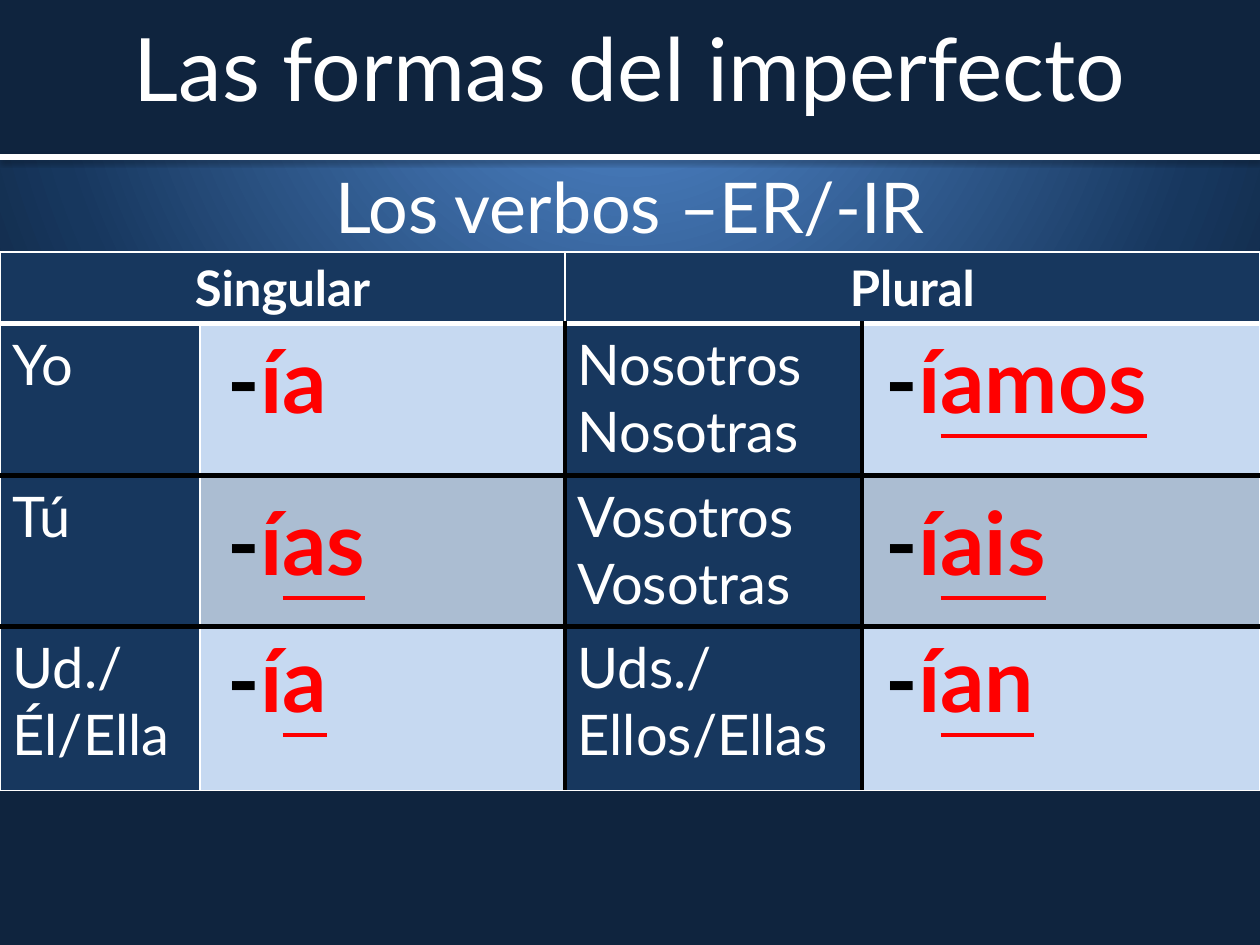
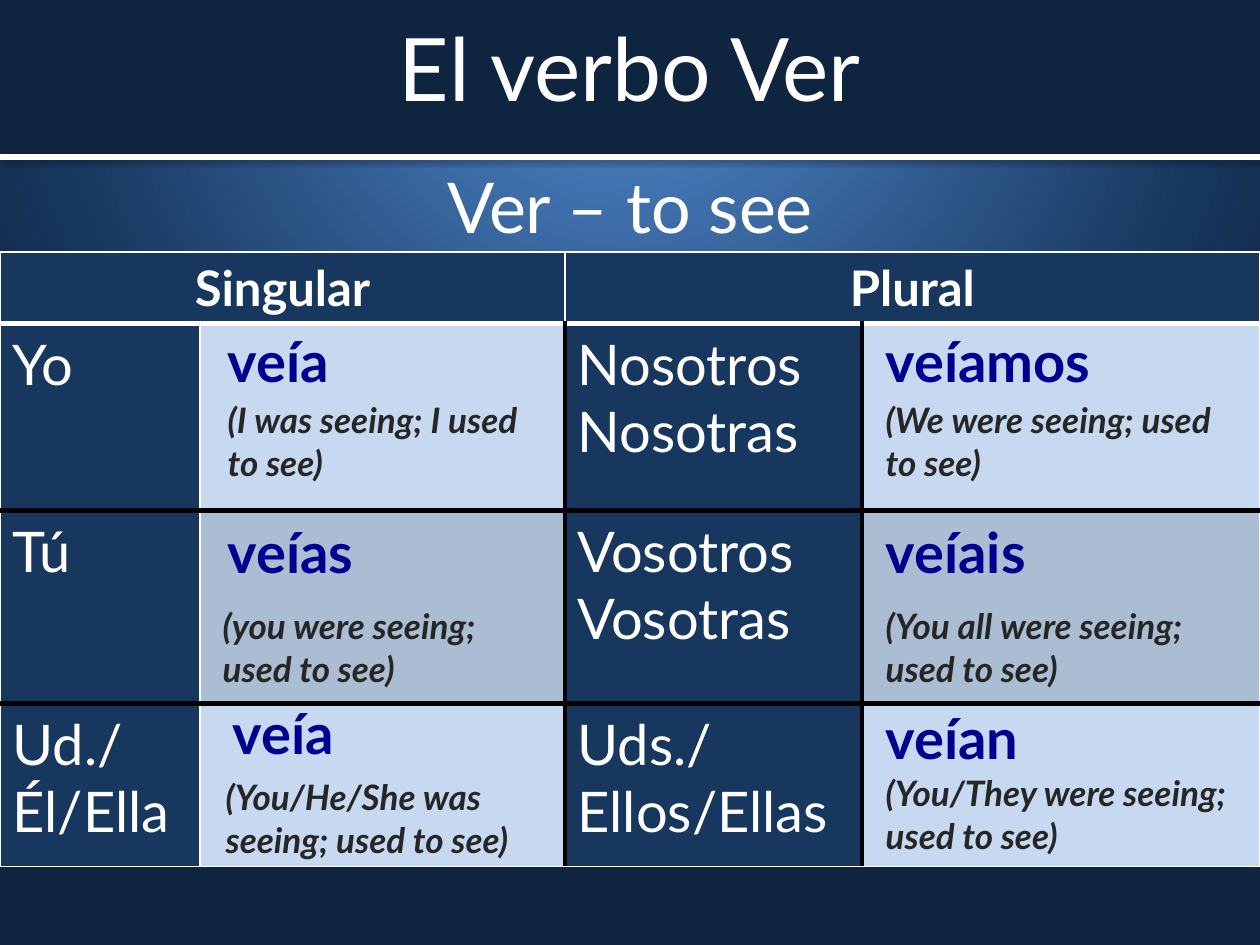
import pptx
import pptx.util
import pptx.dml.color
import pptx.enum.shapes
import pptx.enum.text
import pptx.oxml
import pptx.oxml.ns

SCALE = 914400 / 126
WIDTH, HEIGHT = 1260, 945
FONT = "Lato"
COLORS = {
    "white": "FFFFFF", "black": "000000", "red": "FF0000", "verb": "000090",
    "gloss": "262626", "sky": "558ED5", "navy": "17375E", "night": "0F243E",
    "pale": "C6D9F1", "gray": "ABBDD2",
}
SPACE = 'xmlns:a="http://schemas.openxmlformats.org/drawingml/2006/main"'
PLAIN = "{2D5ABB26-0587-4C30-8999-92F81FD0307C}"

COLS = [200, 365, 297, 398]
HEADS = {0: "Singular", 2: "Plural"}
LABELS = [
    ("Yo", "Nosotros\nNosotras"),
    ("Tú", "Vosotros\nVosotras"),
    ("Ud./Él/Ella", "Uds./Ellos/Ellas"),
]
ACROSS = [("white", 1), ("white", 3), ("black", 3), ("black", 3), ("white", 1)]
DOWN = [("white", 1), ("white", 1), ("black", 3), ("black", 3), ("white", 1)]

ENDINGS = [
    (215, 321, 310, "ía", ""),
    (215, 483, 295, "í", "as"),
    (215, 620, 310, "í", "a"),
    (873, 321, 355, "í", "amos"),
    (873, 483, 318, "í", "ais"),
    (873, 620, 302, "í", "an"),
]
VERBS = [
    (215, 321, 310, "veía"),
    (215, 512, 295, "veías"),
    (220, 693, 310, "veía"),
    (873, 321, 355, "veíamos"),
    (873, 512, 318, "veíais"),
    (873, 698, 302, "veían"),
]
GLOSSES = [
    (215, 393, 333, "(I was seeing; I used to see)"),
    (210, 599, 355, "(you were seeing; used to see)"),
    (213, 770, 368, "(You/He/She was seeing; used to see)"),
    (873, 393, 387, "(We were seeing; used to see)"),
    (873, 599, 368, "(You all were seeing; used to see)"),
    (873, 766, 387, "(You/They were seeing; used to see)"),
]


def px(count):
    return pptx.util.Emu(round(count * SCALE))


def box(left, top, width, height):
    return px(left), px(top), px(width), px(height)


def rgb(name):
    return pptx.dml.color.RGBColor.from_string(COLORS[name])


def style(run, size, color, bold=False, italic=False, under=False):
    font = run.font
    font.name = FONT
    font.size = pptx.util.Pt(size)
    font.color.rgb = rgb(color)
    font.bold = bold
    font.italic = italic
    font.underline = under


def style_all(frame, *look, center=False):
    for para in frame.paragraphs:
        if center:
            para.alignment = pptx.enum.text.PP_ALIGN.CENTER
        for run in para.runs:
            style(run, *look)


def set_back(master):
    fill = master.background.fill
    fill.solid()
    solid = master.element.find(".//" + pptx.oxml.ns.qn("a:solidFill"))
    stops = "".join(
        f'<a:gs pos="{pos}000"><a:srgbClr val="{COLORS[name]}"/></a:gs>'
        for pos, name in ((0, "sky"), (75, "navy"), (100, "night")))
    grad = pptx.oxml.parse_xml(
        f'<a:gradFill {SPACE} rotWithShape="1"><a:gsLst>{stops}</a:gsLst>'
        '<a:path path="circle"><a:fillToRect l="50000" t="-80000" r="50000" '
        'b="180000"/></a:path></a:gradFill>')
    solid.getparent().replace(solid, grad)


def add_band(slide):
    band = slide.shapes.add_shape(
        pptx.enum.shapes.MSO_SHAPE.RECTANGLE, *box(0, 0, WIDTH, 157))
    band.shadow.inherit = False
    band.fill.solid()
    band.fill.fore_color.rgb = rgb("night")
    band.line.fill.background()
    slide.shapes.element.insert(2, band.element)


def add_rule(slide):
    rule = slide.shapes.add_connector(
        pptx.enum.shapes.MSO_CONNECTOR.STRAIGHT,
        px(0), px(157), px(WIDTH), px(157))
    rule.line.color.rgb = rgb("white")
    rule.line.width = pptx.util.Pt(3)
    rule.element.spPr.append(pptx.oxml.parse_xml(
        f'<a:effectLst {SPACE}><a:outerShdw blurRad="40000" dist="20000" '
        f'dir="5400000" rotWithShape="0"><a:srgbClr val="{COLORS["black"]}">'
        '<a:alpha val="38000"/></a:srgbClr></a:outerShdw></a:effectLst>'))


def set_text(holder, text, size, area, anchor):
    holder.left, holder.top, holder.width, holder.height = box(*area)
    frame = holder.text_frame
    frame.text = text
    frame.word_wrap = True
    frame.auto_size = pptx.enum.text.MSO_AUTO_SIZE.NONE
    frame.vertical_anchor = anchor
    style_all(frame, size, "white", center=True)


def add_slide(deck, title, topic):
    slide = deck.slides.add_slide(deck.slide_layouts[0])
    anchor = pptx.enum.text.MSO_ANCHOR
    head, body = slide.placeholders
    set_text(head, title, 50, (0, 0, WIDTH, 133), anchor.MIDDLE)
    set_text(body, topic, 40, (0, 157, WIDTH, 655), anchor.TOP)
    add_band(slide)
    add_rule(slide)
    return slide


def add_table(slide, left, top, cols, rows):
    frame = slide.shapes.add_table(
        len(rows), len(cols), *box(left, top, sum(cols), sum(rows)))
    table = frame.table
    table.first_row = table.horz_banding = False
    table._tbl.tblPr.find(pptx.oxml.ns.qn("a:tableStyleId")).text = PLAIN
    for col, width in zip(table.columns, cols):
        col.width = px(width)
    for row, height in zip(table.rows, rows):
        row.height = px(height)
    return table


def set_edge(cell, side, color, width):
    cell._tc.get_or_add_tcPr().append(pptx.oxml.parse_xml(
        f'<a:ln{side} {SPACE} w="{width * 12700}"><a:solidFill>'
        f'<a:srgbClr val="{COLORS[color]}"/></a:solidFill></a:ln{side}>'))


def paint(cell, row, col):
    down = DOWN if row else [("white", 1)] * 5
    set_edge(cell, "L", *down[col])
    set_edge(cell, "R", *down[col + 1])
    set_edge(cell, "T", *ACROSS[row])
    set_edge(cell, "B", *ACROSS[row + 1])
    shade = "gray" if row == 2 else "pale"
    cell.fill.solid()
    cell.fill.fore_color.rgb = rgb(
        "navy" if row == 0 or col % 2 == 0 else shade)


def add_grid(slide, rows):
    table = add_table(slide, 0, 252, COLS, rows)
    for row in range(len(rows)):
        for col in range(len(COLS)):
            paint(table.cell(row, col), row, col)
    for col, text in HEADS.items():
        cell = table.cell(0, col)
        cell.merge(table.cell(0, col + 1))
        cell.text_frame.text = text
        style_all(cell.text_frame, 28, "white", True, center=True)
    for row, pair in enumerate(LABELS, 1):
        for col, text in zip(HEADS, pair):
            frame = table.cell(row, col).text_frame
            frame.text = text
            style_all(frame, 32, "white")


def add_note(slide, left, top, width, height, text, *look):
    frame = add_table(slide, left, top, [width], [height]).cell(0, 0).text_frame
    frame.text = text
    style_all(frame, *look)
    return frame.paragraphs[0]


def add_ending(slide, left, top, width, stem, tail):
    para = add_note(slide, left, top, width, 117, "-", 50, "black", True)
    for text, under in ((stem, False), (tail, True)):
        if text:
            run = para.add_run()
            run.text = text
            style(run, 50, "red", True, False, under)


def main():
    deck = pptx.Presentation()
    deck.slide_width, deck.slide_height = px(WIDTH), px(HEIGHT)
    set_back(deck.slide_master)

    forms = add_slide(deck, "Las formas del imperfecto", "Los verbos –ER/-IR")
    add_grid(forms, [71, 152, 151, 164])
    for ending in ENDINGS:
        add_ending(forms, *ending)

    verb = add_slide(deck, "El verbo Ver", "Ver – to see")
    add_grid(verb, [71, 187, 193, 163])
    for left, top, width, text in VERBS:
        add_note(verb, left, top, width, 79, text, 32, "verb", True)
    for left, top, width, text in GLOSSES:
        add_note(verb, left, top, width, 97, text, 20, "gloss", True, True)

    deck.save("out.pptx")


if __name__ == "__main__":
    main()
